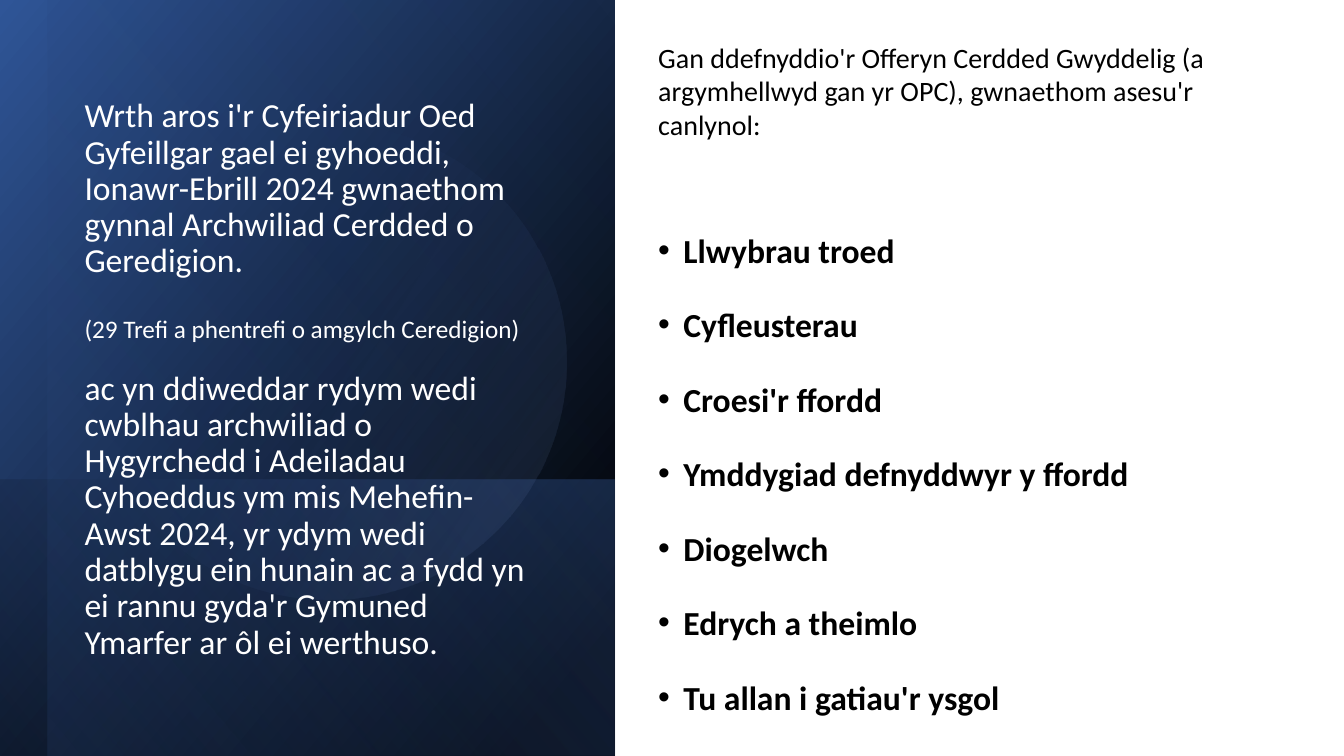
"""Build the walking audit slide: a shaded blue panel beside a bullet list."""
import pptx
import pptx.dml.color
import pptx.enum.shapes
import pptx.enum.text
import pptx.oxml
import pptx.oxml.ns
import pptx.util

Inches, Pt = pptx.util.Inches, pptx.util.Pt
Shape = pptx.enum.shapes.MSO_SHAPE
Anchor = pptx.enum.text.MSO_ANCHOR


def color(code):
    return pptx.dml.color.RGBColor.from_string(code)


def write(frame, index, text, font, form):
    para = frame.paragraphs[0] if index == 0 else frame.add_paragraph()
    run = para.add_run()
    run.text = text
    run.font.name = "Calibri"
    run.font.color.rgb = color(font.pop("color"))
    for target, values in ((run.font, font), (para, form)):
        for name, value in values.items():
            setattr(target, name, value)
    return para


deck = pptx.Presentation()
deck.slide_width, deck.slide_height = Inches(13.33), Inches(7.5)
slide = deck.slides.add_slide(deck.slide_layouts[6])

panels = [
    (Shape.RECTANGLE, (-0.7, 0.7, 7.5, 6.1), 90, True, 50,
     [(8, "000000", 100), (100, "2F5597", 100)]),
    (Shape.RECTANGLE, (1.67, 3.08, 2.74, 6.1), 90, True, 130,
     [(2, "4472C4", 29), (100, "000000", 30)]),
    (Shape.RECTANGLE, (-0.46, 0.93, 7.5, 5.63), 90, True, 130,
     [(0, "000000", 0), (99, "4472C4", 11)]),
    (Shape.OVAL, (0.9, 1.23, 4.72, 4.72), 101.6, False, 290,
     [(39, "4472C4", 0), (100, "8FAADC", 15)]),
]
for kind, place, turn, flip, angle, stops in panels:
    panel = slide.shapes.add_shape(kind, *map(Inches, place))
    panel.rotation = turn
    panel.shadow.inherit = False
    panel.line.fill.background()
    panel.fill.background()
    props = panel._element.spPr
    if flip:
        props.xfrm.set("flipH", "1")
    marks = "".join(
        f'<a:gs pos="{pos * 1000}"><a:srgbClr val="{code}">'
        f'<a:alpha val="{alpha * 1000}"/></a:srgbClr></a:gs>'
        for pos, code, alpha in stops)
    blend = pptx.oxml.parse_xml(
        f'<a:gradFill {pptx.oxml.ns.nsdecls("a")} rotWithShape="1">'
        f'<a:gsLst>{marks}</a:gsLst>'
        f'<a:lin ang="{angle * 60000}" scaled="0"/></a:gradFill>')
    props.replace(props.find(pptx.oxml.ns.qn("a:noFill")), blend)

boxes = []
for place, frame_form in [
    ((0.74, 3.33, 4.63, 3.64),
     {"vertical_anchor": Anchor.BOTTOM, "margin_bottom": Inches(0.41)}),
    ((6.43, 0.55, 6.58, 6.41), {"vertical_anchor": Anchor.MIDDLE}),
]:
    frame = slide.shapes.add_textbox(*map(Inches, place)).text_frame
    for name, value in {"word_wrap": True, **frame_form}.items():
        setattr(frame, name, value)
    boxes.append(frame)
title, body = boxes

story = [
    ("Wrth aros i'r Cyfeiriadur Oed Gyfeillgar gael ei gyhoeddi, "
     "Ionawr-Ebrill 2024 gwnaethom gynnal Archwiliad Cerdded o Geredigion.",
     24, 0),
    ("(29 Trefi a phentrefi o amgylch Ceredigion)", 18, 26),
    ("ac yn ddiweddar rydym wedi cwblhau archwiliad o Hygyrchedd i Adeiladau "
     "Cyhoeddus ym mis Mehefin-Awst 2024, yr ydym wedi datblygu ein hunain "
     "ac a fydd yn ei rannu gyda'r Gymuned Ymarfer ar ôl ei werthuso.",
     24, 19.5),
]
for index, (text, size, gap) in enumerate(story):
    write(title, index, text, {"color": "FFFFFF", "size": Pt(size)},
          {"line_spacing": 0.9, "space_before": Pt(gap)})

write(body, 0,
      "Gan ddefnyddio'r Offeryn Cerdded Gwyddelig (a argymhellwyd gan yr "
      "OPC), gwnaethom asesu'r canlynol:",
      {"color": "000000", "size": Pt(20)}, {"space_before": Pt(10)})
topics = ["Llwybrau troed", "Cyfleusterau", "Croesi'r ffordd",
          "Ymddygiad defnyddwyr y ffordd", "Diogelwch", "Edrych a theimlo",
          "Tu allan i gatiau'r ysgol"]
for index, topic in enumerate(topics, 1):
    para = write(body, index, topic,
                 {"color": "000000", "size": Pt(24), "bold": True},
                 {"line_spacing": 1.5,
                  "space_before": Pt(49 if index == 1 else 10)})
    props = para._p.get_or_add_pPr()
    props.set("marL", str(Inches(0.25)))
    props.set("indent", str(-Inches(0.25)))
    for tag in ('buFont {} typeface="Arial"', 'buChar {} char="•"'):
        props.append(pptx.oxml.parse_xml(
            f'<a:{tag.format(pptx.oxml.ns.nsdecls("a"))}/>'))

deck.save("out.pptx")
